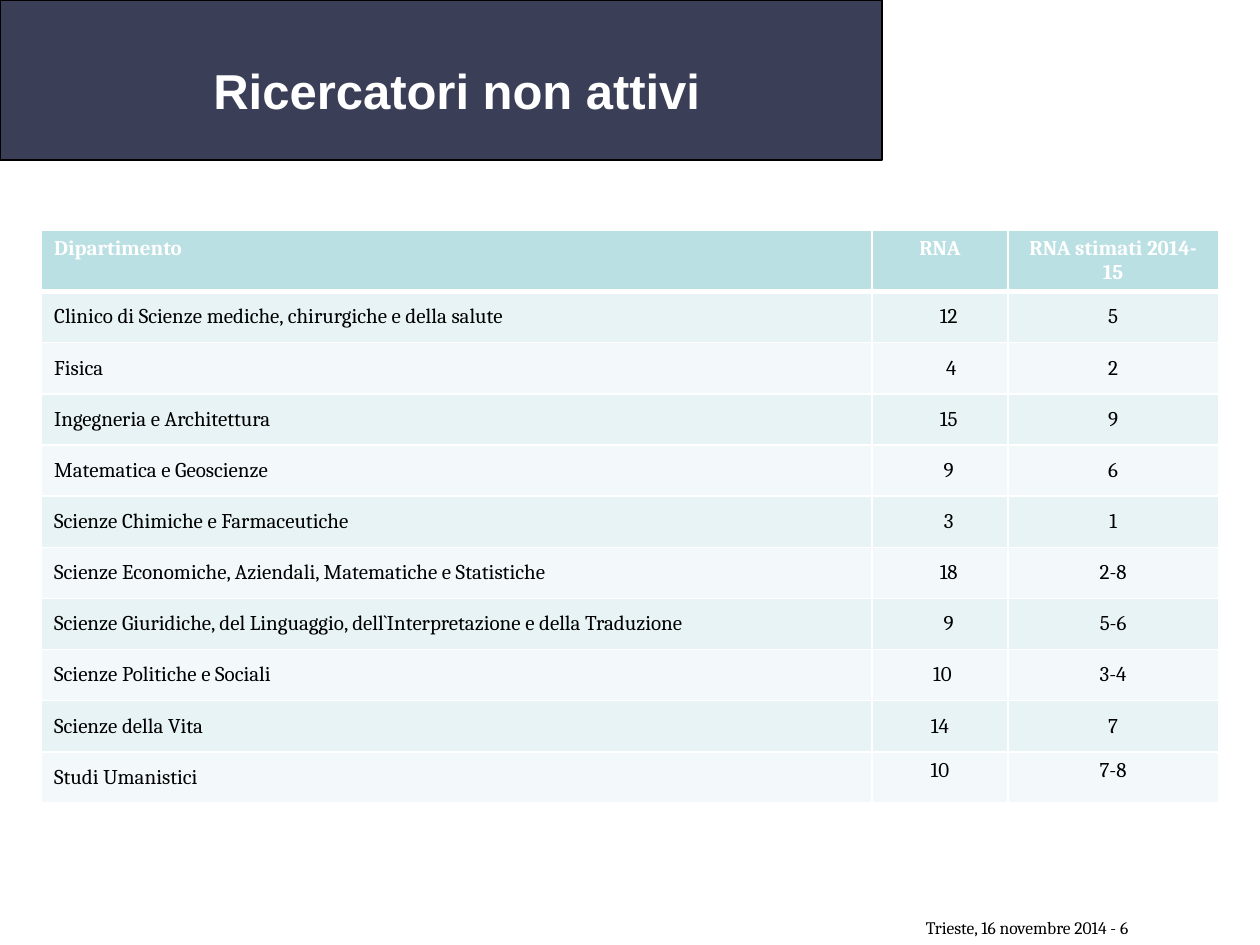
from lxml.etree import SubElement
from pptx import Presentation
from pptx.dml.color import RGBColor
from pptx.enum.shapes import MSO_SHAPE
from pptx.enum.text import MSO_ANCHOR as Anchor, PP_ALIGN as Align
from pptx.oxml.ns import qn
from pptx.util import Inches, Pt

COLORS = {
    "banner": "3B3E57",
    "header": "BBE0E3",
    "odd": "E7F3F4",
    "even": "F3F9FA",
    "white": "FFFFFF",
    "black": "000000",
}
COLUMN_WIDTHS = (6.59, 1.08, 1.67)
ROW_HEIGHT = 0.406
CELL_MARGIN = 0.1
HEADINGS = ("Dipartimento", "RNA", "RNA stimati 2014-15")
# Department, inactive researchers, estimate, extra indent of the second column
DEPARTMENTS = (
    ("Clinico di Scienze mediche, chirurgiche e della salute", "12", "5", 0.14),
    ("Fisica", "4", "2", 0.18),
    ("Ingegneria e Architettura", "15", "9", 0.14),
    ("Matematica e Geoscienze", "9", "6", 0.14),
    ("Scienze Chimiche e Farmaceutiche", "3", "1", 0.14),
    ("Scienze Economiche, Aziendali, Matematiche e Statistiche", "18", "2-8", 0.14),
    ("Scienze Giuridiche, del Linguaggio, dell`Interpretazione e della Traduzione",
     "9", "5-6", 0.14),
    ("Scienze Politiche e Sociali", "10", "3-4", 0.04),
    ("Scienze della Vita", "14", "7", 0),
    ("Studi Umanistici", "10", "7-8", 0),
)


def rgb(name):
    return RGBColor.from_string(COLORS[name])


def write(frame, text, size=12, font="Cambria", color="black", bold=False,
          align=Align.LEFT):
    paragraph = frame.paragraphs[0]
    paragraph.alignment = align
    run = paragraph.add_run()
    run.text = text
    run.font.size = Pt(size)
    run.font.name = font
    run.font.bold = bold
    run.font.color.rgb = rgb(color)


def add_banner(slide):
    banner = slide.shapes.add_shape(
        MSO_SHAPE.RECTANGLE, 0, 0, Inches(7), Inches(1.27))
    banner.shadow.inherit = False
    banner.fill.solid()
    banner.fill.fore_color.rgb = rgb("banner")
    banner.line.color.rgb = rgb("black")
    banner.line.width = Pt(0.75)


def place_title(slide, text):
    """Format the title and bring it in front of the banner."""
    title = slide.shapes.title
    title.left, title.top = Inches(0.25), Inches(0.28)
    title.width, title.height = Inches(6.75), Inches(0.86)
    title.text_frame.vertical_anchor = Anchor.MIDDLE
    write(title.text_frame, text, size=28, font="Arial", color="white",
          bold=True, align=Align.CENTER)
    title.element.getparent().append(title.element)


def add_borders(cell, top=1, bottom=1):
    properties = cell._tc.get_or_add_tcPr()
    for side, width in (("L", 1), ("R", 1), ("T", top), ("B", bottom)):
        line = SubElement(properties, qn(f"a:ln{side}"), w=str(Pt(width)))
        fill = SubElement(line, qn("a:solidFill"))
        SubElement(fill, qn("a:srgbClr"), val=COLORS["white"])


def fill_cell(cell, text, fill, indent=0, anchor=Anchor.MIDDLE, top=1, bottom=1,
              **text_format):
    add_borders(cell, top, bottom)
    cell.fill.solid()
    cell.fill.fore_color.rgb = rgb(fill)
    cell.vertical_anchor = anchor
    cell.margin_left = Inches(CELL_MARGIN + indent)
    write(cell.text_frame, text, **text_format)


def add_department_table(slide):
    row_count = len(DEPARTMENTS) + 1
    table = slide.shapes.add_table(
        row_count, len(HEADINGS), Inches(0.33), Inches(1.83),
        Inches(sum(COLUMN_WIDTHS)), Inches(ROW_HEIGHT * row_count)).table
    for column, width in zip(table.columns, COLUMN_WIDTHS):
        column.width = Inches(width)
    for row in table.rows:
        row.height = Inches(ROW_HEIGHT)

    aligns = (Align.LEFT, Align.CENTER, Align.CENTER)
    for column, heading in enumerate(HEADINGS):
        fill_cell(table.cell(0, column), heading, "header", anchor=Anchor.TOP,
                  bottom=3, color="white", bold=True, align=aligns[column])
    for row, (*values, indent) in enumerate(DEPARTMENTS, start=1):
        for column, value in enumerate(values):
            at_top = row == len(DEPARTMENTS) and column > 0
            fill_cell(table.cell(row, column), value,
                      "odd" if row % 2 else "even",
                      indent=indent if column == 1 else 0,
                      anchor=Anchor.TOP if at_top else Anchor.MIDDLE,
                      top=3 if row == 1 else 1, align=aligns[column])


def add_footer(slide, text):
    footer = slide.shapes.add_textbox(
        Inches(7.25), Inches(7.23), Inches(2.58), Inches(0.27))
    footer.text_frame.word_wrap = True
    write(footer.text_frame, text, size=10)


def main():
    deck = Presentation()
    deck.slide_width, deck.slide_height = Inches(10), Inches(7.5)
    slide = deck.slides.add_slide(deck.slide_layouts[5])
    add_footer(slide, "Trieste, 16 novembre 2014 - 6")
    add_banner(slide)
    place_title(slide, "Ricercatori non attivi")
    add_department_table(slide)
    deck.save("out.pptx")


if __name__ == "__main__":
    main()
